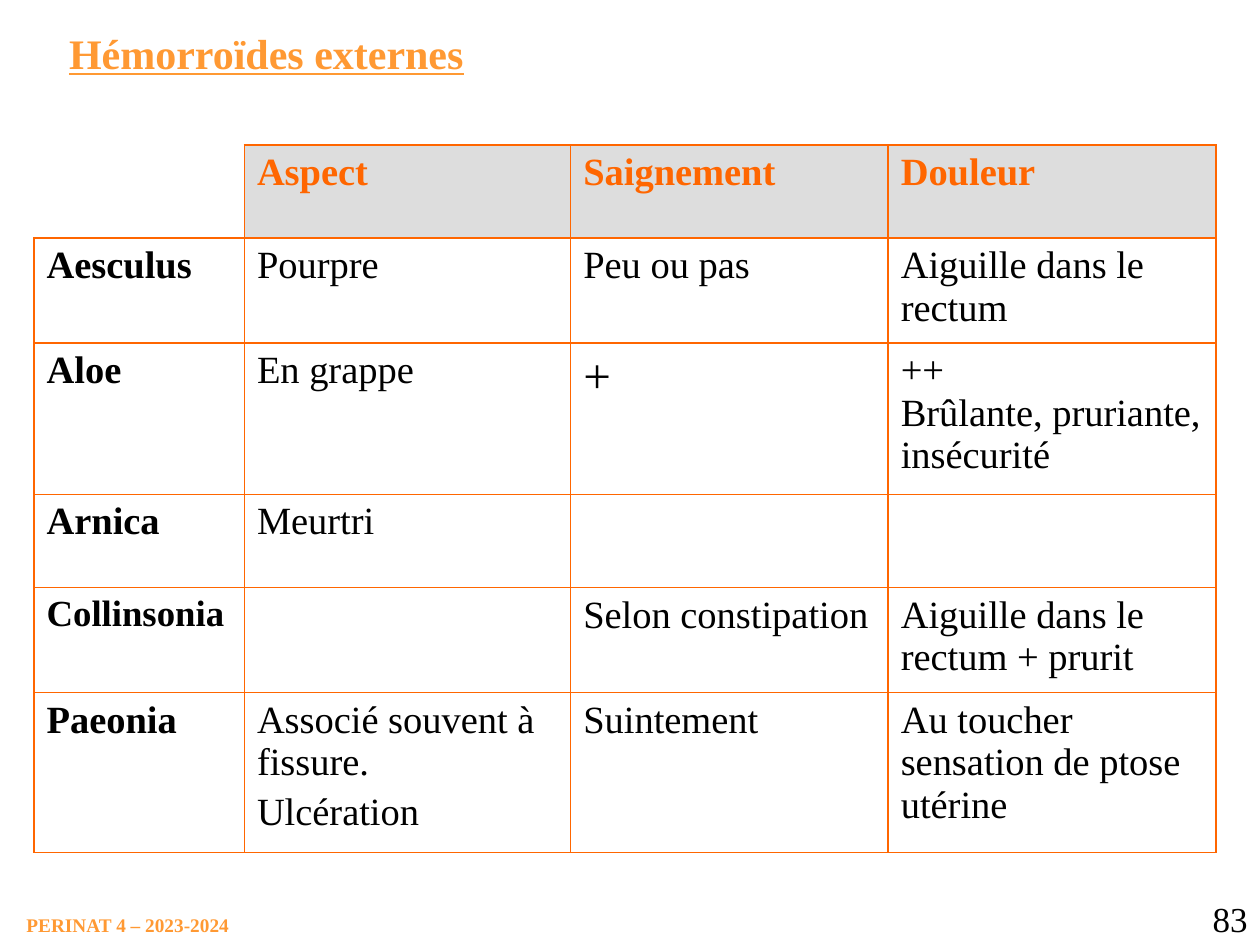
from lxml import etree
from pptx import Presentation
from pptx.dml.color import RGBColor
from pptx.enum.text import MSO_AUTO_SIZE, PP_ALIGN
from pptx.oxml.ns import qn
from pptx.util import Inches, Pt

RIGHT = PP_ALIGN.RIGHT
GROW = MSO_AUTO_SIZE.SHAPE_TO_FIT_TEXT
FONT = "Times New Roman"
COLORS = {"accent": "FF9933", "grid": "FF6600", "header": "DDDDDD", "body": "000000"}

TITLE = "Hémorroïdes externes"
FOOTER = "PERINAT 4 – 2023-2024"
PAGE = "83"
SYMPTOMS = ["Aspect", "Saignement", "Douleur"]
REMEDIES = [
    ("Aesculus", ["Pourpre"], ["Peu ou pas"], ["Aiguille dans le rectum"]),
    ("Aloe", ["En grappe"], ["+"], ["++", "Brûlante, pruriante,", "insécurité"]),
    ("Arnica", ["Meurtri"], [], []),
    ("Collinsonia", [], ["Selon constipation"], ["Aiguille dans le rectum + prurit"]),
    ("Paeonia", ["Associé souvent à fissure.", "Ulcération"], ["Suintement"],
     ["Au toucher", "sensation de ptose utérine"]),
]
BODY_SIZE = 22
SPECIAL_SIZES = {"+": 28, "Collinsonia": 21}
SPACED = {"Ulcération": 4.4}

SLIDE_W, SLIDE_H = 10, 7.5
TABLE_LEFT, TABLE_TOP = 0.27, 1.15
COLUMNS = [1.67, 2.59, 2.52, 2.6]
ROWS = [0.74, 0.83, 1.2, 0.74, 0.83, 1.27]


def add_run(paragraph, text, size, color, bold=False, underline=False):
    run = paragraph.add_run()
    run.text = text
    font = run.font
    font.name, font.size = FONT, Pt(size)
    font.bold, font.underline = bold, underline
    font.color.rgb = RGBColor.from_string(COLORS[color])


def add_label(slide, box, text, size, color, bold=False, underline=False,
              align=None, wrap=False, inset=None):
    frame = slide.shapes.add_textbox(*map(Inches, box)).text_frame
    frame.word_wrap = wrap
    frame.auto_size = GROW
    if inset is not None:
        frame.margin_left = frame.margin_right = Inches(inset)
        frame.margin_top = frame.margin_bottom = Inches(inset)
    paragraph = frame.paragraphs[0]
    paragraph.alignment = align
    add_run(paragraph, text, size, color, bold, underline)


def set_borders(cell, visible):
    properties = cell._tc.get_or_add_tcPr()
    for side in "LRTB":
        line = etree.SubElement(properties, qn(f"a:ln{side}"), w=str(Pt(1)))
        if side in visible:
            paint = etree.SubElement(line, qn("a:solidFill"))
            etree.SubElement(paint, qn("a:srgbClr"), val=COLORS["grid"])
        else:
            etree.SubElement(line, qn("a:noFill"))


def fill_cell(cell, lines, color, bold):
    frame = cell.text_frame
    for index, text in enumerate(lines):
        paragraph = frame.add_paragraph() if index else frame.paragraphs[0]
        if text in SPACED:
            paragraph.space_before = Pt(SPACED[text])
        add_run(paragraph, text, SPECIAL_SIZES.get(text, BODY_SIZE), color, bold)


def add_remedy_table(slide):
    table = slide.shapes.add_table(
        len(ROWS), len(COLUMNS), Inches(TABLE_LEFT), Inches(TABLE_TOP),
        Inches(sum(COLUMNS)), Inches(sum(ROWS))).table
    table.first_row = table.horz_banding = False
    for column, width in zip(table.columns, COLUMNS):
        column.width = Inches(width)
    for row, height in zip(table.rows, ROWS):
        row.height = Inches(height)

    header = [[]] + [[symptom] for symptom in SYMPTOMS]
    body = [[[name], *findings] for name, *findings in REMEDIES]
    for r, row in enumerate([header] + body):
        for c, lines in enumerate(row):
            cell = table.cell(r, c)
            set_borders(cell, "LRTB" if r or c else "RB")
            if r == 0 and c:
                cell.fill.solid()
                cell.fill.fore_color.rgb = RGBColor.from_string(COLORS["header"])
            else:
                cell.fill.background()
            fill_cell(cell, lines, "body" if r else "grid", r == 0 or c == 0)


def main():
    deck = Presentation()
    deck.slide_width, deck.slide_height = Inches(SLIDE_W), Inches(SLIDE_H)
    slide = deck.slides.add_slide(deck.slide_layouts[6])
    add_label(slide, (0.21, 7.25, 1.64, 0.19), FOOTER, 11, "accent", bold=True, inset=0)
    add_label(slide, (9.17, 7.07, 0.83, 0.43), PAGE, 20, "body", align=RIGHT, wrap=True)
    add_remedy_table(slide)
    add_label(slide, (0.45, 0.17, 3.34, 0.5), TITLE, 24, "accent", bold=True, underline=True)
    deck.save("out.pptx")


if __name__ == "__main__":
    main()
